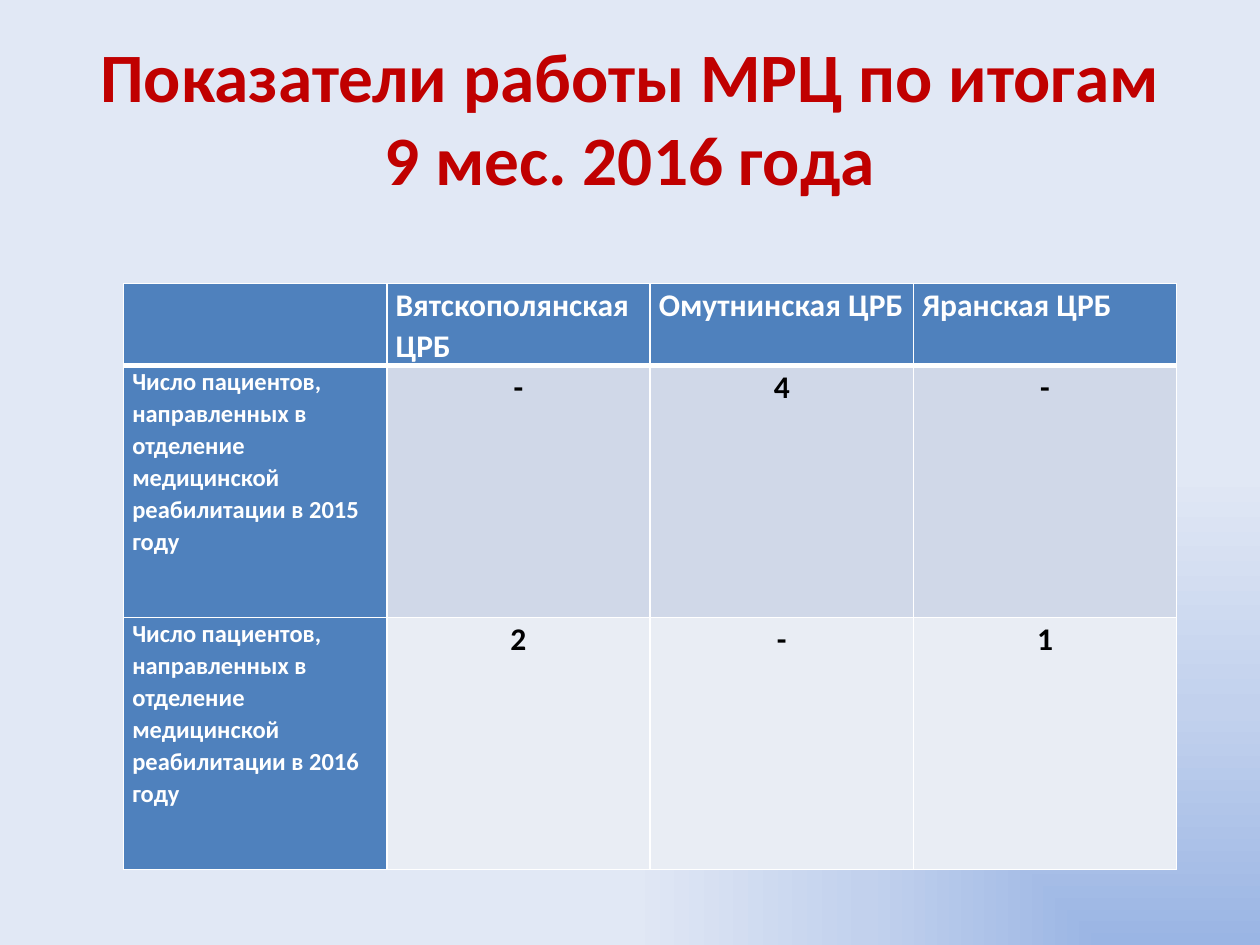
from pptx import Presentation
from pptx.dml.color import RGBColor
from pptx.enum.text import MSO_ANCHOR, PP_ALIGN
from pptx.oxml import parse_xml
from pptx.oxml.ns import nsdecls
from pptx.util import Inches, Pt

CENTER, LEFT = PP_ALIGN.CENTER, PP_ALIGN.LEFT
MIDDLE = MSO_ANCHOR.MIDDLE

# Content
TITLE = "Показатели работы МРЦ по итогам 9 мес. 2016 года"
PATIENTS = "Число пациентов, направленных в отделение медицинской реабилитации в {} году"
ROWS = [
    ["", "Вятскополянская ЦРБ", "Омутнинская ЦРБ", "Яранская ЦРБ"],
    [PATIENTS.format(2015), "-", "4", "-"],
    [PATIENTS.format(2016), "2", "-", "1"],
]
ROW_HEIGHTS = [0.65, 2, 2]
COLUMN_WIDTH = 2.09
BACKGROUND_STOPS = [(0, "9AB5E4"), (50, "C2D1ED"), (100, "E1E8F5")]
BLUE, WHITE, BLACK, RED = "4F81BD", "FFFFFF", "000000", "C00000"
BAND_FILLS = ["D0D8E8", "E9EDF4"]


def color(value):
    return RGBColor.from_string(value)


def style(para, size, text_color, align):
    para.alignment = align
    para.font.name = "Calibri"
    para.font.size = Pt(size)
    para.font.bold = True
    para.font.color.rgb = color(text_color)


def set_background(page):
    stops = "".join(
        f'<a:gs pos="{position * 1000}"><a:srgbClr val="{value}"/></a:gs>'
        for position, value in BACKGROUND_STOPS
    )
    background = parse_xml(
        f'<p:bg {nsdecls("p", "a")}><p:bgPr><a:gradFill rotWithShape="1">'
        f'<a:gsLst>{stops}</a:gsLst><a:path path="rect">'
        '<a:fillToRect l="100000" t="100000"/></a:path></a:gradFill>'
        '<a:effectLst/></p:bgPr></p:bg>'
    )
    page.shapes.element.addprevious(background)


def set_borders(cell, widths):
    properties = cell._tc.get_or_add_tcPr()
    for index, (side, width) in enumerate(widths.items()):
        properties.insert(index, parse_xml(
            f'<a:ln{side} {nsdecls("a")} w="{Pt(width)}"><a:solidFill>'
            f'<a:srgbClr val="{WHITE}"/></a:solidFill></a:ln{side}>'
        ))


def fill_cell(cell, text, row, column):
    is_header, is_label = row == 0, column == 0
    cell.margin_left = cell.margin_right = Inches(0.07)
    cell.margin_top = cell.margin_bottom = 0
    cell.fill.solid()
    cell.fill.fore_color.rgb = color(BLUE if is_header or is_label else BAND_FILLS[row - 1])
    set_borders(cell, {"L": 1, "R": 1, "T": 3 if row == 1 else 1, "B": 3 if is_header else 1})
    cell.text = text
    para = cell.text_frame.paragraphs[0]
    para.line_spacing = 1.07
    if is_header:
        style(para, 18, WHITE, LEFT)
    elif is_label:
        style(para, 14, WHITE, LEFT)
    else:
        style(para, 18, BLACK, CENTER)


deck = Presentation()
deck.slide_width, deck.slide_height = Inches(10), Inches(7.5)
page = deck.slides.add_slide(deck.slide_layouts[6])
set_background(page)

# Title
title = page.shapes.add_textbox(Inches(0.5), Inches(0.3), Inches(9), Inches(1.25))
title.text_frame.word_wrap = True
title.text_frame.vertical_anchor = MIDDLE
title.text_frame.text = TITLE
style(title.text_frame.paragraphs[0], 39.6, RED, CENTER)

# Table of patients by hospital and year
column_count = len(ROWS[0])
table = page.shapes.add_table(
    len(ROWS), column_count, Inches(0.98), Inches(2.25),
    Inches(COLUMN_WIDTH * column_count), Inches(sum(ROW_HEIGHTS)),
).table
for table_column in table.columns:
    table_column.width = Inches(COLUMN_WIDTH)
for row, (texts, height) in enumerate(zip(ROWS, ROW_HEIGHTS)):
    table.rows[row].height = Inches(height)
    for column, text in enumerate(texts):
        fill_cell(table.cell(row, column), text, row, column)

deck.save("out.pptx")
